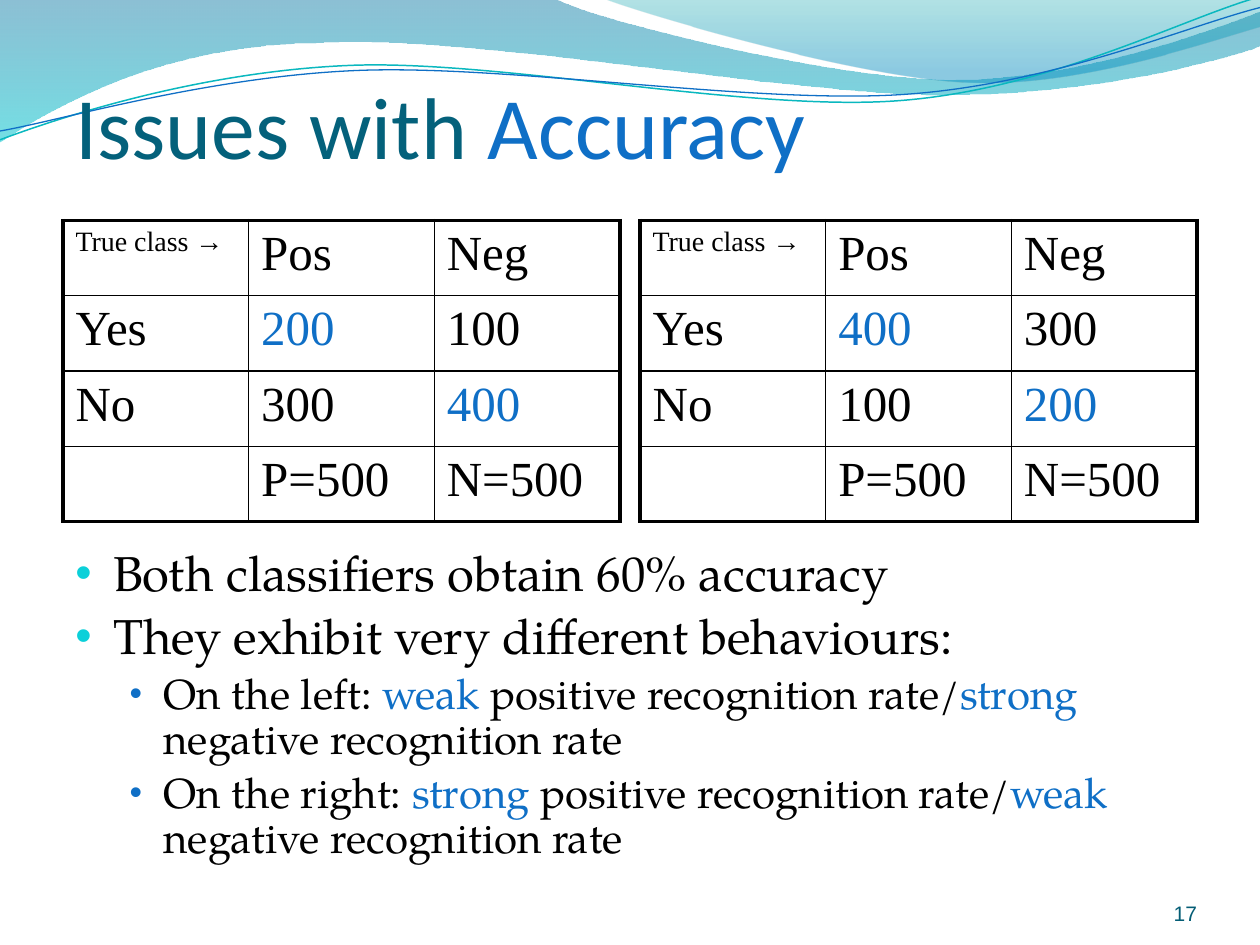
from lxml import etree
from pptx import Presentation
from pptx.dml.color import RGBColor
from pptx.enum.text import MSO_ANCHOR, MSO_AUTO_SIZE, PP_ALIGN
from pptx.oxml import parse_xml
from pptx.oxml.ns import nsdecls, qn
from pptx.util import Inches, Pt

TOP, BOTTOM = MSO_ANCHOR.TOP, MSO_ANCHOR.BOTTOM
LEFT, RIGHT = PP_ALIGN.LEFT, PP_ALIGN.RIGHT
NO_AUTOFIT = MSO_AUTO_SIZE.NONE

COLORS = {
    "text": "000000", "accent": "0F6FC6", "title": "04617B", "number": "045D75",
    "bullet": "0BD0D9", "teal": "0AB8BF",
    "wave_top": "0074A1", "wave_bottom": "00C6CF",
    "crest_top": "00A1A9", "crest_bottom": "008BBF",
}
TABLE_FONT, BODY_FONT = "Times New Roman", "TeX Gyre Pagella"

# A segment of two numbers is a corner; one of six is a Bézier curve.
WAVE = [(0, -0.01), (4.4, -0.01), (4.76, 0.17, 6.64, 0.63, 7.58, 0.63),
        (8.53, 0.63, 9.58, 0.26, 10, 0.09), (10.01, 0.36),
        (9.83, 0.44, 8.7, 0.76, 7.46, 0.75), (6.22, 0.75, 3.82, 0.28, 2.57, 0.34),
        (1.29, 0.35, 0.46, 0.83, -0.01, 1.13)]
CREST = [(4.79, -0.01), (5.09, 0.11, 6.82, 0.62, 7.69, 0.65),
         (8.56, 0.69, 9.61, 0.32, 10, 0.21), (10, 0)]
TEAL_LINE = [(0, 1.11), (0.48, 0.93, 1.58, 0.57, 2.77, 0.52),
             (3.95, 0.47, 5.93, 0.89, 7.13, 0.8), (8.33, 0.71, 9.38, 0.15, 9.98, -0.02)]
BLUE_LINE = [(0, 1.04), (0.47, 0.96, 1.64, 0.61, 2.83, 0.56),
             (4.03, 0.51, 5.97, 0.83, 7.17, 0.75), (8.36, 0.67, 9.41, 0.21, 10, 0.06)]

BULLETS = [
    (0, [("Both classifiers obtain 60% accuracy", "text")]),
    (0, [("They exhibit very different behaviours:", "text")]),
    (1, [("On the left: ", "text"), ("weak ", "accent"),
         ("positive recognition rate/", "text"), ("strong ", "accent"),
         ("negative recognition rate", "text")]),
    (1, [("On the right: ", "text"), ("strong", "accent"),
         (" positive recognition rate/", "text"), ("weak ", "accent"),
         ("negative recognition rate", "text")]),
]
# Per level: size, left margin, hanging indent, bullet colour, bullet size in percent
LEVELS = [(28, 0.3, 0.3, "bullet", 95), (24, 0.7, 0.27, "accent", 85)]


def color(name):
    return RGBColor.from_string(COLORS[name])


def add_outline(page, outline, close):
    """Add a freeform, then join the three points of each curve into one Bézier."""
    points = [(Inches(segment[i]), Inches(segment[i + 1]))
              for segment in outline for i in range(0, len(segment), 2)]
    builder = page.shapes.build_freeform(*points[0], scale=1.0)
    builder.add_line_segments(points[1:], close=close)
    shape = builder.convert_to_shape()
    lines = iter(list(shape._element.spPr.iter(qn("a:lnTo"))))
    for segment in outline[1:]:
        line = next(lines)
        if len(segment) == 6:
            line.addprevious(curve := etree.Element(qn("a:cubicBezTo")))
            for part in (line, next(lines), next(lines)):
                curve.append(part[0])
                part.getparent().remove(part)
    shape.shadow.inherit = False
    shape.fill.background()
    return shape


def add_wave(page, outline, stops):
    """Add a closed area with a downward gradient of (position, colour, opacity)."""
    shape = add_outline(page, outline, True)
    shape.line.fill.background()
    marks = "".join(
        f'<a:gs pos="{position * 1000}"><a:srgbClr val="{COLORS[name]}">'
        f'<a:alpha val="{opacity * 1000}"/></a:srgbClr></a:gs>'
        for position, name, opacity in stops)
    gradient = parse_xml(f'<a:gradFill {nsdecls("a")} rotWithShape="1"><a:gsLst>{marks}'
                         '</a:gsLst><a:lin ang="5400000" scaled="0"/></a:gradFill>')
    properties = shape._element.spPr
    properties.replace(properties.find(qn("a:noFill")), gradient)


def add_curve(page, outline, name, width):
    shape = add_outline(page, outline, False)
    shape.line.color.rgb = color(name)
    shape.line.width = Pt(width)


def add_span(para, text, font, size, name):
    span = para.add_run()
    span.text = text
    span.font.name = font
    span.font.size = Pt(size)
    span.font.color.rgb = color(name)


def set_title(page, spans):
    title = page.shapes.title
    title.left, title.top = Inches(0.5), Inches(0.52)
    title.width, title.height = Inches(9), Inches(1.25)
    frame = title.text_frame
    frame.vertical_anchor = TOP
    frame.auto_size = NO_AUTOFIT
    para = frame.paragraphs[0]
    para.alignment = LEFT
    for text, name in spans:
        add_span(para, text, "Calibri", 50, name)
    page.shapes._spTree.append(title._element)  # in front of the waves


def set_borders(cell, widths):
    properties = cell._tc.get_or_add_tcPr()
    for side, width in zip("LRTB", widths):
        line = etree.SubElement(properties, qn(f"a:ln{side}"), w=str(Pt(width)))
        fill = etree.SubElement(line, qn("a:solidFill"))
        etree.SubElement(fill, qn("a:srgbClr"), val=COLORS["text"])
    cell.fill.background()


def add_confusion_table(page, left, yes, no):
    """Add one classifier's counts; correct decisions are accented."""
    rows = [("True class →", "Pos", "Neg"), ("Yes", *yes), ("No", *no),
            ("", "P=500", "N=500")]
    table = page.shapes.add_table(4, 3, Inches(left), Inches(1.75),
                                  Inches(4.42), Inches(2.39)).table
    table.first_row = table.horz_banding = False
    for r, row in enumerate(rows):
        for c, text in enumerate(row):
            cell = table.cell(r, c)
            if text:
                name = "accent" if (r, c) in ((1, 1), (2, 2)) else "text"
                size = 16 if (r, c) == (0, 0) else 28
                add_span(cell.text_frame.paragraphs[0], text, TABLE_FONT, size, name)
            outer = (c == 0, c == 2, r == 0, r == 3)
            set_borders(cell, [2.25 if edge else 1 for edge in outer])


def add_text_box(page, left, top, width, height):
    box = page.shapes.add_textbox(Inches(left), Inches(top), Inches(width), Inches(height))
    box.text_frame.word_wrap = True
    return box.text_frame


def add_bullets(page):
    frame = add_text_box(page, 0.5, 4.31, 9, 2.77)
    for index, (level, spans) in enumerate(BULLETS):
        size, margin, hanging, bullet_color, bullet_size = LEVELS[level]
        para = frame.add_paragraph() if index else frame.paragraphs[0]
        para.level = level
        para.line_spacing = 0.9
        para.space_before = Pt(size * 0.2)
        properties = para._p.get_or_add_pPr()
        properties.set("marL", str(Inches(margin)))
        properties.set("indent", str(-Inches(hanging)))
        tint = etree.SubElement(properties, qn("a:buClr"))
        etree.SubElement(tint, qn("a:srgbClr"), val=COLORS[bullet_color])
        etree.SubElement(properties, qn("a:buSzPct"), val=str(bullet_size * 1000))
        etree.SubElement(properties, qn("a:buFont"), typeface="Arial")
        etree.SubElement(properties, qn("a:buChar"), char="•")
        for text, name in spans:
            add_span(para, text, BODY_FONT, size, name)


def add_page_number(page, number):
    frame = add_text_box(page, 8.67, 6.95, 0.83, 0.4)
    frame.margin_left = frame.margin_right = frame.margin_top = frame.margin_bottom = 0
    frame.vertical_anchor = BOTTOM
    para = frame.paragraphs[0]
    para.alignment = RIGHT
    add_span(para, number, "Arial", 12, "number")


def main():
    deck = Presentation()
    deck.slide_width, deck.slide_height = Inches(10), Inches(7.5)
    page = deck.slides.add_slide(deck.slide_layouts[5])
    add_wave(page, WAVE, [(0, "wave_top", 45), (100, "wave_bottom", 55)])
    add_wave(page, CREST, [(0, "crest_top", 30), (80, "crest_bottom", 45)])
    add_curve(page, TEAL_LINE, "teal", 0.85)
    add_curve(page, BLUE_LINE, "accent", 0.75)
    add_page_number(page, "17")
    set_title(page, [("Issues with ", "title"), ("Accuracy", "accent")])
    add_confusion_table(page, 0.5, ("200", "100"), ("300", "400"))
    add_confusion_table(page, 5.08, ("400", "300"), ("100", "200"))
    add_bullets(page)
    deck.save("out.pptx")


if __name__ == "__main__":
    main()
